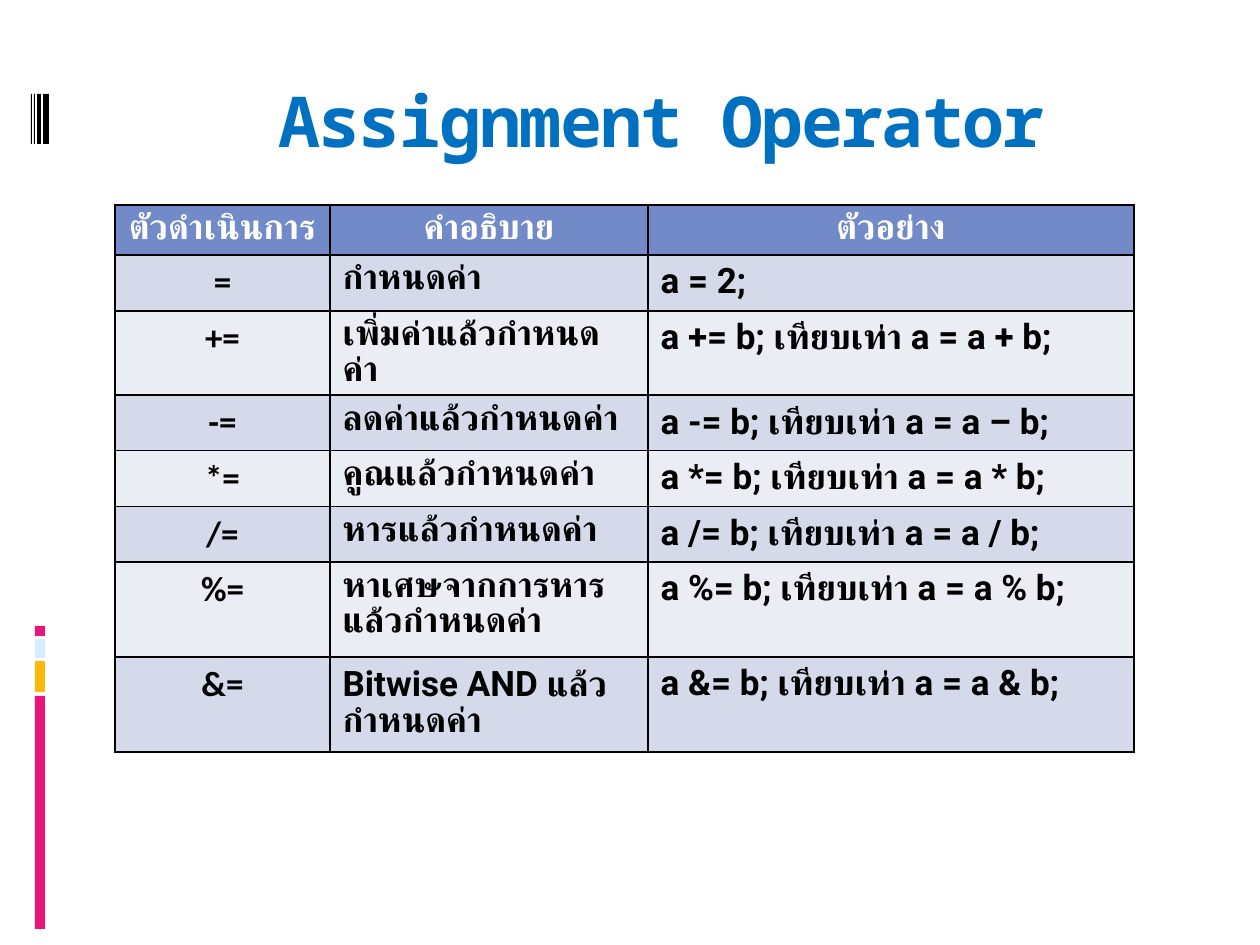
import pptx
import pptx.dml.color
import pptx.enum.lang
import pptx.enum.shapes
import pptx.enum.text
import pptx.util
import lxml.etree

RGB = pptx.dml.color.RGBColor
BLACK = RGB(0x00, 0x00, 0x00)
WHITE = RGB(0xFF, 0xFF, 0xFF)
PINK = RGB(0xEA, 0x15, 0x7A)
AMBER = RGB(0xFE, 0xB8, 0x0A)
PALE_BLUE = RGB(0xD6, 0xEC, 0xFF)
TITLE_BLUE = RGB(0x00, 0x70, 0xC0)
HEADER_FILL = RGB(0x73, 0x8A, 0xC8)
BAND_FILLS = [RGB(0xEB, 0xED, 0xF5), RGB(0xD5, 0xDA, 0xEB)]

PX = 914400 // 126
CENTER = pptx.enum.text.PP_ALIGN.CENTER
LEFT = pptx.enum.text.PP_ALIGN.LEFT


def sub(parent, tag, **attrs):
    name = pptx.oxml.ns.qn(tag)
    return lxml.etree.SubElement(parent, name, **attrs)


def add_run(p, text, font, size, color):
    r = p.add_run()
    r.text = text
    r.font.name = font
    r.font.size = pptx.util.Pt(size)
    r.font.bold = True
    r.font.color.rgb = color
    return r


prs = pptx.Presentation()
prs.slide_width = 1260 * PX
prs.slide_height = 945 * PX
s = prs.slides.add_slide(prs.slide_layouts[5])

# Side bars: left, top, width, height, colour
bars = [
    (35, 696, 10, 233, PINK),
    (35, 661, 10, 31, AMBER),
    (35, 639, 10, 19, PALE_BLUE),
    (35, 626, 10, 10, PINK),
    (43, 94, 6, 50, BLACK),
    (37, 94, 4, 50, BLACK),
    (34, 94, 1, 50, BLACK),
    (31, 94, 1, 50, BLACK),
]
for x, y, w, h, color in bars:
    sp = s.shapes.add_shape(pptx.enum.shapes.MSO_SHAPE.RECTANGLE,
                            x * PX, y * PX, w * PX, h * PX)
    sp.shadow.inherit = False
    sp.fill.solid()
    sp.fill.fore_color.rgb = color
    sp.line.fill.background()

# Title
title = s.shapes.title
title.left, title.top = 126 * PX, 71 * PX
title.width, title.height = 1071 * PX, 126 * PX
tf = title.text_frame
tf.vertical_anchor = pptx.enum.text.MSO_ANCHOR.TOP
p = tf.paragraphs[0]
p.alignment = CENTER
r = add_run(p, "Assignment Operator", "Noto Sans Mono", 40, TITLE_BLUE)
r.font._element.set("spc", "-100")

# Operator table
rows = [
    ("ตัวดำเนินการ", "คำอธิบาย", "ตัวอย่าง"),
    ("=", "กำหนดค่า", "a = 2;"),
    ("+=", "เพิ่มค่าแล้วกำหนดค่า", "a += b; เทียบเท่า a = a + b;"),
    ("-=", "ลดค่าแล้วกำหนดค่า", "a -= b; เทียบเท่า a = a – b;"),
    ("*=", "คูณแล้วกำหนดค่า", "a *= b; เทียบเท่า a = a * b;"),
    ("/=", "หารแล้วกำหนดค่า", "a /= b; เทียบเท่า a = a / b;"),
    ("%=", "หาเศษจากการหารแล้วกำหนดค่า", "a %= b; เทียบเท่า a = a % b;"),
    ("&=", "Bitwise AND แล้วกำหนดค่า", "a &= b; เทียบเท่า a = a & b;"),
]
col_widths = [215, 318, 486]
row_heights = [50, 56, 83, 55, 56, 55, 95, 95]
table = s.shapes.add_table(len(rows), len(col_widths), 115 * PX, 205 * PX,
                           sum(col_widths) * PX, sum(row_heights) * PX).table
for col, w in zip(table.columns, col_widths):
    col.width = w * PX
for row, h in zip(table.rows, row_heights):
    row.height = h * PX

for i, texts in enumerate(rows):
    for j, text in enumerate(texts):
        header = i == 0
        operator = j == 0 and not header
        cell = table.cell(i, j)

        # Borders, then fill
        tcPr = cell._tc.get_or_add_tcPr()
        for side in ("a:lnL", "a:lnR", "a:lnT", "a:lnB"):
            ln = sub(tcPr, side, w="12700")
            sub(sub(ln, "a:solidFill"), "a:srgbClr", val=str(BLACK))
        cell.fill.solid()
        cell.fill.fore_color.rgb = HEADER_FILL if header else BAND_FILLS[i % 2]

        # Text, with tighter lines for Thai
        p = cell.text_frame.paragraphs[0]
        p.alignment = CENTER if header or j == 0 else LEFT
        if header or j == 1:
            p.line_spacing = 0.87
            if text[0].isascii():
                cell.margin_top = 11 * PX
        r = add_run(p, text, "Calibri" if operator else "Roboto", 20,
                    WHITE if header else BLACK)
        if not operator:
            r.font.language_id = pptx.enum.lang.MSO_LANGUAGE_ID.THAI
            sub(r.font._element, "a:cs", typeface="Roboto")

prs.save("out.pptx")
